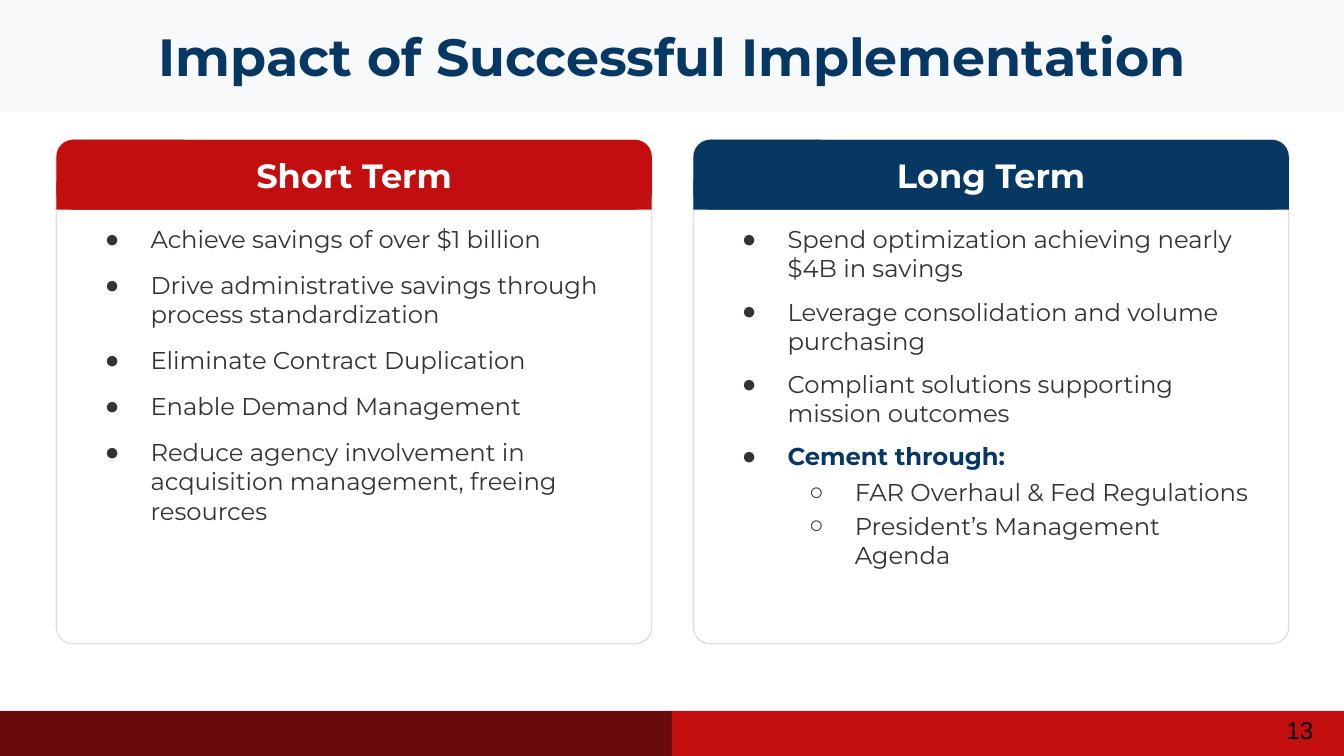
from dataclasses import dataclass

from lxml.etree import SubElement
from pptx import Presentation
from pptx.dml.color import RGBColor
from pptx.enum.shapes import MSO_SHAPE as Shape
from pptx.enum.text import MSO_ANCHOR as Anchor, MSO_AUTO_SIZE as AutoSize, PP_ALIGN as Align
from pptx.oxml.ns import qn
from pptx.util import Inches, Pt


@dataclass(frozen=True)
class Theme:
    """Colours, fonts and type sizes of the deck."""
    navy: str = "073763"
    red: str = "C20E0E"
    maroon: str = "690B0B"
    band: str = "F8F9FA"
    white: str = "FFFFFF"
    border: str = "E0E0E0"
    ink: str = "333333"
    black: str = "000000"
    font: str = "Montserrat"
    number_font: str = "Arial"
    title_size: float = 28
    heading_size: float = 18
    body_size: float = 13


@dataclass(frozen=True)
class Box:
    """A rectangle in inches."""
    left: float
    top: float
    width: float
    height: float

    def inset(self, left, top, width, height):
        """Return a box placed relative to this one."""
        return Box(self.left + left, self.top + top, width, height)

    def lengths(self):
        """Return the four sides as slide lengths."""
        return [Inches(side) for side in (self.left, self.top, self.width, self.height)]


@dataclass(frozen=True)
class Item:
    """One bullet of a list."""
    text: str
    space: float = 0
    level: int = 0
    strong: bool = False


THEME = Theme()
PAGE = Box(0, 0, 10, 10 * 9 / 16)
CORNER = 0.125
CARD = Box(0.42, 1.04, 4.43, 3.75)
CARD_PITCH = 4.74
FOOTER_TOP = 5.29
BULLETS = "●○"

SHORT_TERM = [
    Item("Achieve savings of over $1 billion"),
    Item("Drive administrative savings through process standardization", 9),
    Item("Eliminate Contract Duplication", 9),
    Item("Enable Demand Management", 9),
    Item("Reduce agency involvement in acquisition management, freeing resources", 9),
]
LONG_TERM = [
    Item("Spend optimization achieving nearly $4B in savings"),
    Item("Leverage consolidation and volume purchasing", 7.5),
    Item("Compliant solutions supporting mission outcomes", 7.5),
    Item("Cement through:", 7.5, strong=True),
    Item("FAR Overhaul & Fed Regulations", 3.8, level=1),
    Item("President’s Management Agenda", 2.2, level=1),
]


def add_panel(shapes, box, fill, line=None, rounded=False):
    """Draw a flat rectangle, optionally outlined or rounded."""
    kind = Shape.ROUNDED_RECTANGLE if rounded else Shape.RECTANGLE
    panel = shapes.add_shape(kind, *box.lengths())
    panel.shadow.inherit = False
    panel.fill.solid()
    panel.fill.fore_color.rgb = RGBColor.from_string(fill)
    if rounded:
        panel.adjustments[0] = CORNER / box.height
    if line:
        panel.line.color.rgb = RGBColor.from_string(line)
        panel.line.width = Pt(0.75)
    else:
        panel.line.fill.background()


def prepare_frame(holder, anchor=Anchor.TOP, margin=0):
    """Set wrapping, anchor and equal margins, and return the text frame."""
    frame = holder.text_frame
    frame.word_wrap = True
    frame.auto_size = AutoSize.NONE
    frame.vertical_anchor = anchor
    frame.margin_left = frame.margin_right = Inches(margin)
    frame.margin_top = frame.margin_bottom = Inches(margin)
    return frame


def add_span(para, text, size, color, bold=False, font=THEME.font):
    """Add one formatted run."""
    span = para.add_run()
    span.text = text
    span.font.name = font
    span.font.size = Pt(size)
    span.font.bold = bold
    span.font.color.rgb = RGBColor.from_string(color)


def place_on_top(page, holder, box):
    """Move a placeholder to a box in front of the shapes drawn so far."""
    holder.left, holder.top, holder.width, holder.height = box.lengths()
    page.shapes.element.append(holder.element)


def set_bullet(para, level):
    """Give a paragraph its hanging indent and bullet."""
    para.level = level
    props = para._p.get_or_add_pPr()
    props.set("marL", str(Inches(0.5 * (level + 1))))
    props.set("indent", str(Inches(-0.34)))
    color = SubElement(props, qn("a:buClr"))
    SubElement(color, qn("a:srgbClr"), val=THEME.ink)
    SubElement(props, qn("a:buChar"), char=BULLETS[level])


def build_title(page, box, text):
    """Draw the title band and fill the title placeholder."""
    add_panel(page.shapes, box, THEME.band)
    title = page.shapes.title
    place_on_top(page, title, box.inset(0.69, 0.11, box.width - 1.38, 0.61))
    para = prepare_frame(title, Anchor.MIDDLE).paragraphs[0]
    para.alignment = Align.CENTER
    add_span(para, text, THEME.title_size, THEME.navy, bold=True)


def build_card(page, box, body, heading, color, items):
    """Draw a card with a coloured header and a bulleted list."""
    header = box.inset(0, 0, box.width, 0.52)
    group = page.shapes.add_group_shape()
    add_panel(group.shapes, box, THEME.white, THEME.border, rounded=True)
    add_panel(group.shapes, header, color, rounded=True)
    add_panel(group.shapes, header.inset(0, 0.31, box.width, 0.21), color)
    label = group.shapes.add_textbox(*header.lengths())
    para = prepare_frame(label, Anchor.MIDDLE).paragraphs[0]
    para.alignment = Align.CENTER
    add_span(para, heading, THEME.heading_size, THEME.white, bold=True)

    place_on_top(page, body, box.inset(0.2, 0.63, box.width - 0.42, 2.92))
    frame = prepare_frame(body)
    for index, item in enumerate(items):
        para = frame.add_paragraph() if index else frame.paragraphs[0]
        set_bullet(para, item.level)
        para.space_before = Pt(item.space)
        ink = THEME.navy if item.strong else THEME.ink
        add_span(para, item.text, THEME.body_size, ink, item.strong)


def build_footer(page, box, number):
    """Draw the two-tone footer with the page number."""
    half = box.width / 2
    for index, color in enumerate((THEME.maroon, THEME.red)):
        add_panel(page.shapes, box.inset(index * half, 0, half, box.height), color)
    corner = box.inset(box.width - 0.73, -0.07, 0.6, 0.43)
    label = page.shapes.add_textbox(*corner.lengths())
    para = prepare_frame(label, margin=0.1).paragraphs[0]
    para.alignment = Align.RIGHT
    add_span(para, number, THEME.body_size, THEME.black, font=THEME.number_font)


def main():
    """Build and save the deck."""
    deck = Presentation()
    deck.slide_width, deck.slide_height = Inches(PAGE.width), Inches(PAGE.height)
    page = deck.slides.add_slide(deck.slide_layouts.get_by_name("Two Content"))
    bodies = [holder for holder in page.placeholders if holder.placeholder_format.idx]
    build_title(page, PAGE.inset(0, 0, PAGE.width, 0.83), "Impact of Successful Implementation")
    cards = [("Short Term", THEME.red, SHORT_TERM), ("Long Term", THEME.navy, LONG_TERM)]
    for index, (body, card) in enumerate(zip(bodies, cards)):
        box = CARD.inset(index * CARD_PITCH, 0, CARD.width, CARD.height)
        build_card(page, box, body, *card)
    build_footer(page, PAGE.inset(0, FOOTER_TOP, PAGE.width, PAGE.height - FOOTER_TOP), "13")
    deck.save("out.pptx")


if __name__ == "__main__":
    main()
